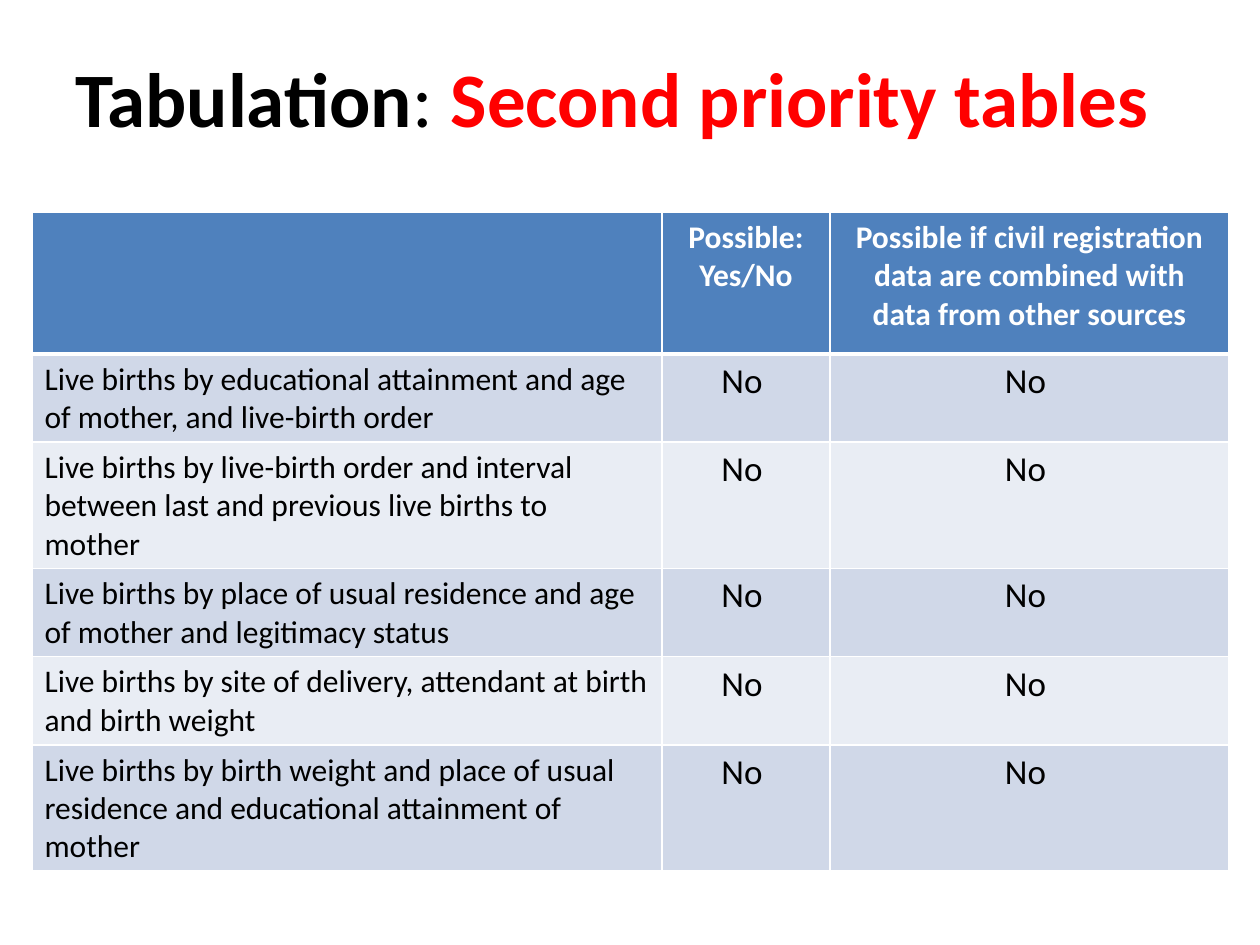
import pptx
import pptx.util
import pptx.dml.color
import pptx.enum.text
import lxml.etree

COLORS = {"black": "000000", "red": "FF0000", "white": "FFFFFF",
          "header": "4F81BD", "odd": "D0D8E8", "even": "E9EDF4"}
TITLE = [("Tabulation", "black", True), (": ", "black", False),
         ("Second priority tables", "red", True)]
HEADERS = ["", "Possible: Yes/No",
           "Possible if civil registration data are combined with data from other sources"]
TABLES = [
    "Live births by educational attainment and age of mother, and live-birth order",
    "Live births by live-birth order and interval between last and previous live births to mother",
    "Live births by place of usual residence and age of mother and legitimacy status",
    "Live births by site of delivery, attendant at birth and birth weight",
    "Live births by birth weight and place of usual residence and educational attainment of mother",
]
ROWS = [HEADERS] + [[name, "No ", "No "] for name in TABLES]
COL_WIDTHS = [630, 168, 399]
HEADER_HEIGHT, ROW_HEIGHT = 142, 87
NS = "http://schemas.openxmlformats.org/drawingml/2006/main"
ALIGN = pptx.enum.text.PP_ALIGN


def px(n):
    return pptx.util.Emu(round(n * 914400 / 126))


def rgb(name):
    return pptx.dml.color.RGBColor.from_string(COLORS[name])


def add_text(p, text, size=18, color="black", bold=False, align=ALIGN.LEFT):
    p.alignment = align
    r = p.add_run()
    r.text = text
    r.font.name = "Calibri"
    r.font.size = pptx.util.Pt(size)
    r.font.bold = bold
    r.font.color.rgb = rgb(color)


def set_borders(cell, bottom):
    tcPr = cell._tc.get_or_add_tcPr()
    widths = {"lnL": 1, "lnR": 1, "lnT": 1, "lnB": bottom}
    for i, (side, width) in enumerate(widths.items()):
        ln = lxml.etree.Element(f"{{{NS}}}{side}", w=str(pptx.util.Pt(width)))
        fill = lxml.etree.SubElement(ln, f"{{{NS}}}solidFill")
        lxml.etree.SubElement(fill, f"{{{NS}}}srgbClr", val=COLORS["white"])
        tcPr.insert(i, ln)


def add_title(s):
    tf = s.shapes.add_textbox(px(63), px(47), px(1134), px(100)).text_frame
    tf.word_wrap = True
    tf.vertical_anchor = pptx.enum.text.MSO_ANCHOR.MIDDLE
    for text, color, bold in TITLE:
        add_text(tf.paragraphs[0], text, size=44, color=color, bold=bold)


def add_priority_table(s):
    heights = [HEADER_HEIGHT] + [ROW_HEIGHT] * len(TABLES)
    table = s.shapes.add_table(len(ROWS), len(COL_WIDTHS), px(32), px(212),
                               px(sum(COL_WIDTHS)), px(sum(heights))).table
    for col, width in zip(table.columns, COL_WIDTHS):
        col.width = px(width)
    for i, (row, height) in enumerate(zip(ROWS, heights)):
        table.rows[i].height = px(height)
        header = i == 0
        band = "header" if header else "odd" if i % 2 else "even"
        for j, text in enumerate(row):
            cell = table.cell(i, j)
            cell.fill.solid()
            cell.fill.fore_color.rgb = rgb(band)
            set_borders(cell, bottom=3 if header else 1)
            if text:
                add_text(cell.text_frame.paragraphs[0], text,
                         size=18 if header or j == 0 else 20,
                         color="white" if header else "black", bold=header,
                         align=ALIGN.CENTER if j else ALIGN.LEFT)


def main():
    prs = pptx.Presentation()
    prs.slide_width, prs.slide_height = px(1260), px(945)
    s = prs.slides.add_slide(prs.slide_layouts[6])
    add_title(s)
    add_priority_table(s)
    prs.save("out.pptx")


if __name__ == "__main__":
    main()
